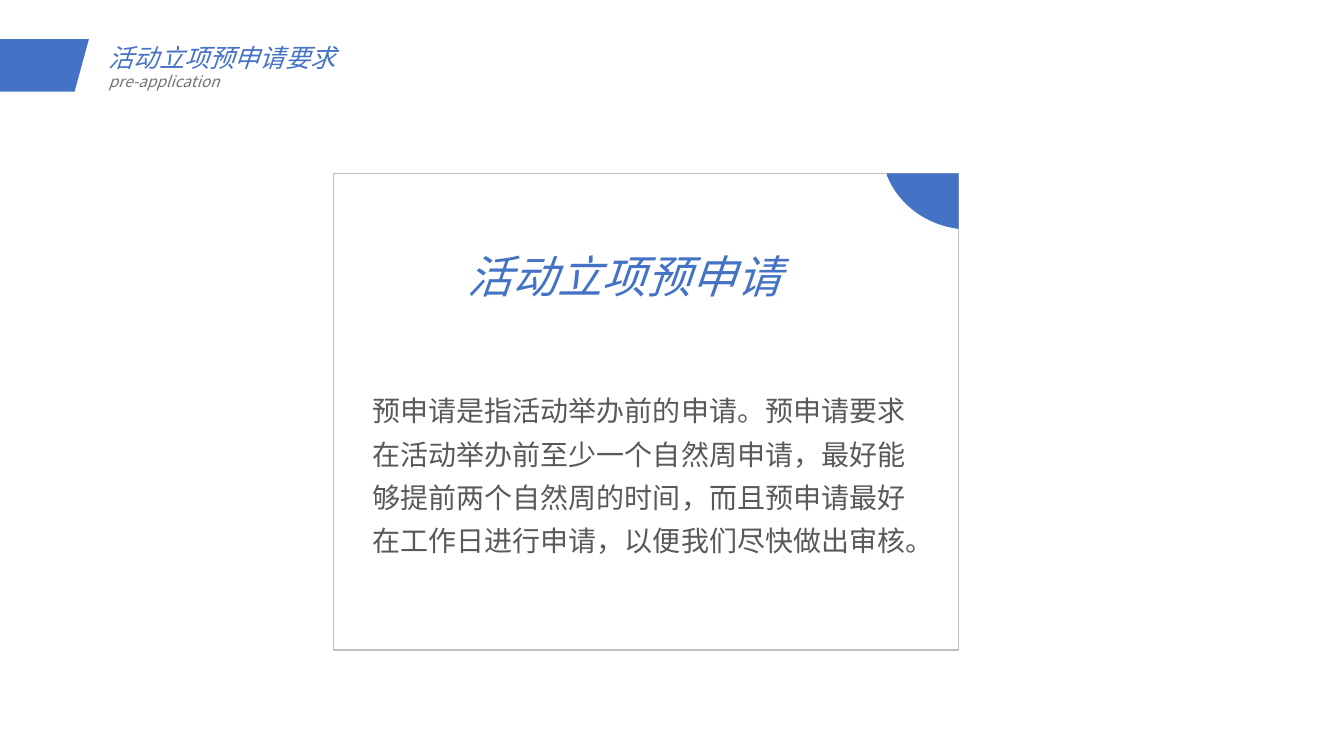
from lxml import etree
from pptx import Presentation
from pptx import util as u
from pptx.dml.color import RGBColor
from pptx.enum import shapes, text
from pptx.oxml import ns

BLUE = "4472C4"
BORDER = "BFBFBF"
BODY_GRAY = "595959"
CAPTION_GRAY = "767171"


def color(value):
    return RGBColor.from_string(value)


def curve(start, control_1, control_2, end, steps=16):
    points = []
    for step in range(steps + 1):
        t = step / steps
        weights = ((1 - t) ** 3, 3 * t * (1 - t) ** 2, 3 * t ** 2 * (1 - t), t ** 3)
        anchors = (start, control_1, control_2, end)
        points.append(tuple(sum(w * a[axis] for w, a in zip(weights, anchors)) for axis in (0, 1)))
    return points


class SlideBuilder:
    font_name = "Noto Sans CJK SC"

    def __init__(self, slide):
        self.slide = slide

    def polygon(self, points, fill):
        corners = [(u.Cm(x), u.Cm(y)) for x, y in points]
        builder = self.slide.shapes.build_freeform(*corners[0])
        builder.add_line_segments(corners[1:], close=True)
        shape = builder.convert_to_shape()
        shape.shadow.inherit = False
        shape.fill.solid()
        shape.fill.fore_color.rgb = color(fill)
        shape.line.fill.background()

    def frame(self, left, top, width, height, line):
        shape = self.slide.shapes.add_shape(
            shapes.MSO_SHAPE.RECTANGLE, u.Cm(left), u.Cm(top), u.Cm(width), u.Cm(height))
        shape.shadow.inherit = False
        shape.fill.background()
        shape.line.color.rgb = color(line)
        shape.line.width = u.Pt(1)

    def label(self, left, top, width, height, content, size, fill, italic=True, spacing=1.2):
        shape = self.slide.shapes.add_textbox(u.Cm(left), u.Cm(top), u.Cm(width), u.Cm(height))
        text_frame = shape.text_frame
        text_frame.word_wrap = True
        text_frame.vertical_anchor = text.MSO_ANCHOR.TOP
        text_frame.text = content
        paragraph = text_frame.paragraphs[0]
        paragraph.alignment = text.PP_ALIGN.LEFT
        paragraph.line_spacing = u.Pt(round(size * spacing))
        run = paragraph.runs[0]
        run.font.size = u.Pt(size)
        run.font.italic = italic
        run.font.color.rgb = color(fill)
        run.font.name = self.font_name
        properties = run.font._element if hasattr(run.font, "_element") else run._r.get_or_add_rPr()
        etree.SubElement(properties, ns.qn("a:ea"), typeface=self.font_name)


def main():
    presentation = Presentation()
    presentation.slide_width = u.Cm(33.87)
    presentation.slide_height = u.Cm(19.05)
    builder = SlideBuilder(presentation.slides.add_slide(presentation.slide_layouts[6]))

    builder.polygon([(0, 0.99), (2.24, 0.99), (1.88, 2.31), (0, 2.31)], BLUE)
    builder.label(2.49, 0.94, 21.89, 1.19, "活动立项预申请要求", 18, BLUE)
    builder.label(2.49, 1.7, 21.89, 0.84, "pre-application", 11, CAPTION_GRAY)

    builder.label(
        9.14, 9.55, 14.2, 4.62,
        "预申请是指活动举办前的申请。预申请要求在活动举办前至少一个自然周申请，"
        "最好能够提前两个自然周的时间，而且预申请最好在工作日进行申请，以便我们尽快做出审核。",
        20, BODY_GRAY, italic=False, spacing=1.55)
    builder.frame(8.4, 4.37, 15.76, 12.01, BORDER)
    builder.label(11.53, 6.15, 9.45, 1.63, "活动立项预申请", 32, BLUE)
    corner_arc = curve((23.98, 5.74), (23.24, 5.59), (22.63, 5.11), (22.35, 4.42))
    builder.polygon([(22.35, 4.37), (24.16, 4.37), (24.16, 5.77)] + corner_arc, BLUE)

    presentation.save("out.pptx")


if __name__ == "__main__":
    main()
